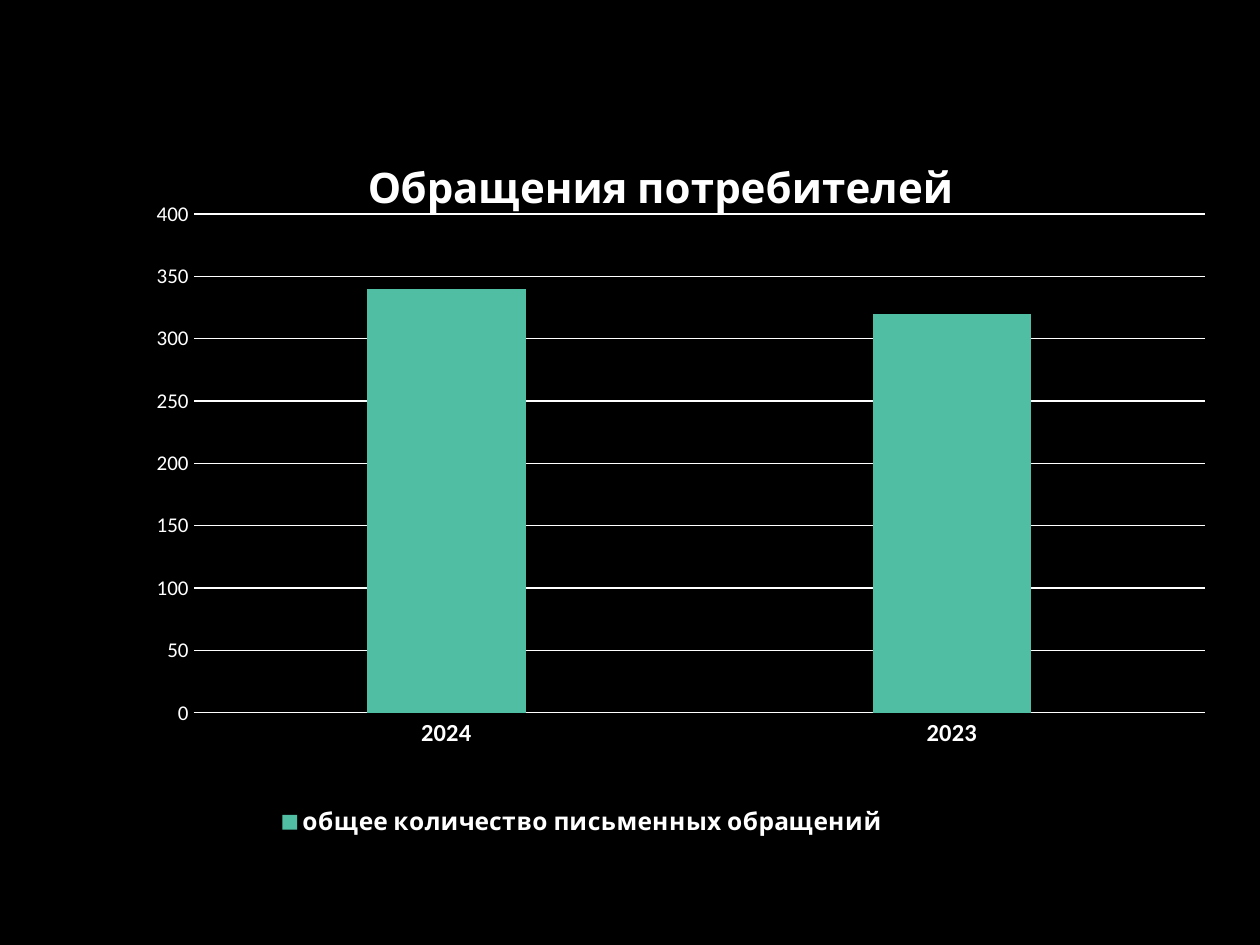
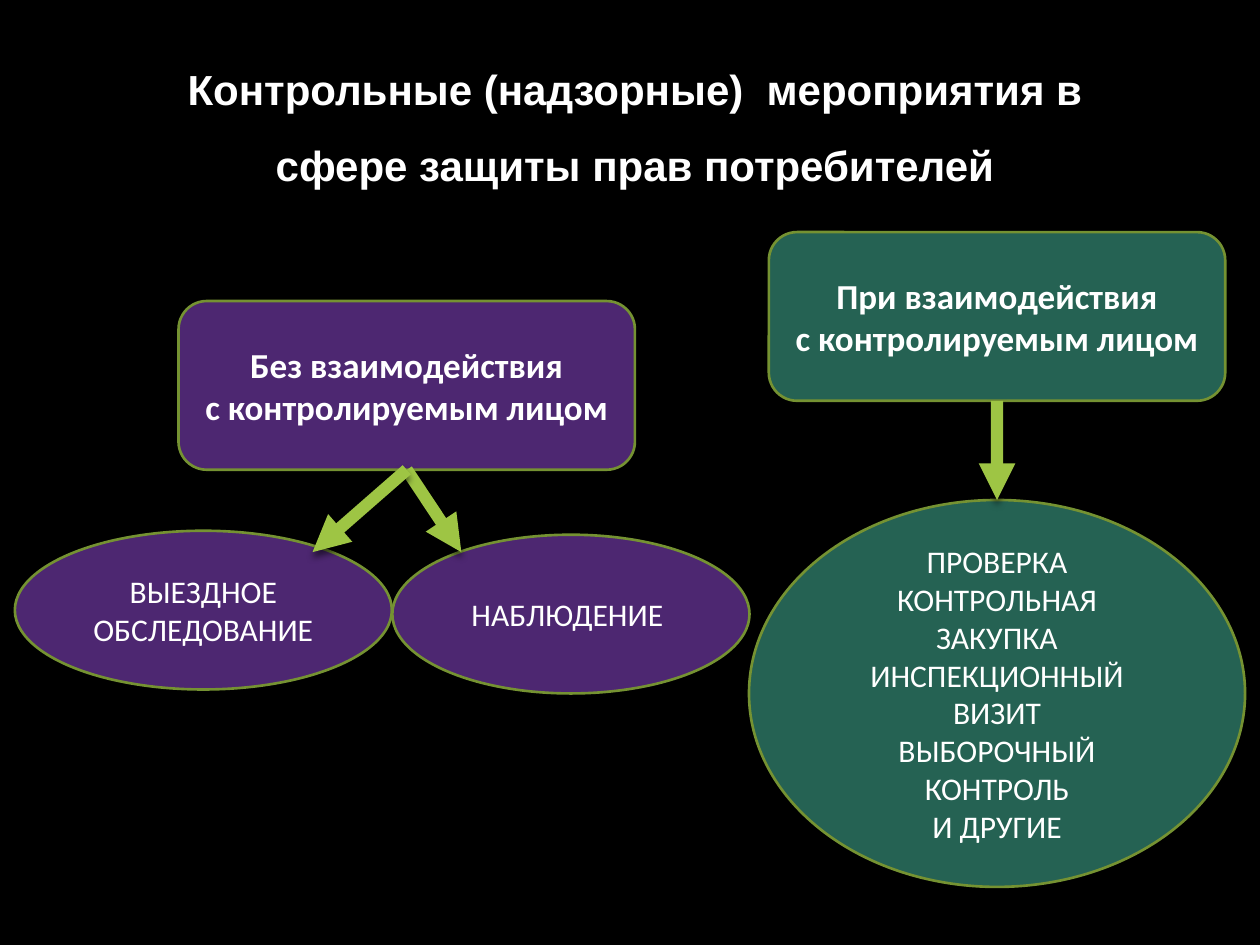
import pptx
import pptx.chart.data
import pptx.dml.color
import pptx.enum.chart
import pptx.enum.shapes
import pptx.enum.text
import pptx.oxml
import pptx.oxml.ns
import pptx.util

Cm = pptx.util.Cm
Pt = pptx.util.Pt
SHAPE = pptx.enum.shapes.MSO_SHAPE

COLORS = {
    "background": "000000",
    "text": "FFFFFF",
    "bar": "50BEA3",
    "remote": "4D2771",
    "contact": "256253",
    "outline": "759232",
    "arrow": "9EC544",
}
TITLE_FONT = {"name": "Arial", "size": Pt(24), "bold": True}
BOX_FONT = {"name": "Calibri", "size": Pt(20), "bold": True}
OVAL_FONT = {"name": "Calibri", "size": Pt(18), "bold": False}
CHART_FONTS = {
    "title": {"name": "Cabin", "size": Pt(24), "bold": True},
    "legend": {"name": "Cabin", "size": Pt(14), "bold": True},
    "category": {"name": "Calibri", "size": Pt(14), "bold": True},
    "value": {"name": "Calibri", "size": Pt(12), "bold": False},
}


def rgb(name):
    return pptx.dml.color.RGBColor.from_string(COLORS[name])


def style_font(font, values):
    for name, value in values.items():
        setattr(font, name, value)
    font.color.rgb = rgb("text")


def style_line(line, color, width):
    line.color.rgb = rgb(color)
    line.width = Pt(width)


def write(tf, lines, font):
    """Put each line in a centred paragraph of its own."""
    tf.word_wrap = True
    for i, line in enumerate(lines):
        p = tf.paragraphs[0] if i == 0 else tf.add_paragraph()
        p.alignment = pptx.enum.text.PP_ALIGN.CENTER
        r = p.add_run()
        r.text = line
        style_font(r.font, font)


def add_title(s, text, left, top, width, height):
    title = s.shapes.title
    title.left, title.top = Cm(left), Cm(top)
    title.width, title.height = Cm(width), Cm(height)
    tf = title.text_frame
    write(tf, [text], TITLE_FONT)
    tf.auto_size = pptx.enum.text.MSO_AUTO_SIZE.SHAPE_TO_FIT_TEXT
    tf.vertical_anchor = pptx.enum.text.MSO_ANCHOR.TOP
    tf.paragraphs[0].line_spacing = 1.5


def add_node(s, kind, color, lines, font, left, top, width, height):
    sp = s.shapes.add_shape(kind, Cm(left), Cm(top), Cm(width), Cm(height))
    sp.shadow.inherit = False
    sp.fill.solid()
    sp.fill.fore_color.rgb = rgb(color)
    style_line(sp.line, "outline", 1.5)
    sp.text_frame.vertical_anchor = pptx.enum.text.MSO_ANCHOR.MIDDLE
    write(sp.text_frame, lines, font)
    return sp


def add_box(s, color, lines, left, top):
    return add_node(s, SHAPE.ROUNDED_RECTANGLE, color, lines, BOX_FONT,
                    left, top, 9.2, 3.4)


def add_oval(s, color, lines, *place):
    return add_node(s, SHAPE.OVAL, color, lines, OVAL_FONT, *place)


def add_arrow(s, box, end_x, end_y):
    """Draw an arrow from the bottom of a box to a point."""
    arrow = s.shapes.add_connector(
        pptx.enum.shapes.MSO_CONNECTOR.STRAIGHT,
        box.left + box.width // 2, box.top + box.height, end_x, end_y)
    arrow.begin_connect(box, 2)
    style_line(arrow.line, "arrow", 7)
    ns = pptx.oxml.ns.nsdecls("a")
    arrow.get_or_add_ln().append(
        pptx.oxml.parse_xml(f'<a:tailEnd {ns} type="triangle"/>'))
    arrow._element.spPr.append(pptx.oxml.parse_xml(
        f'<a:effectLst {ns}><a:outerShdw blurRad="{Pt(4)}" dist="{Pt(3)}" '
        'dir="5400000" rotWithShape="0"><a:srgbClr val="000000">'
        '<a:alpha val="54000"/></a:srgbClr></a:outerShdw></a:effectLst>'))
    return arrow


def set_layout(chart, tag, **fractions):
    """Place a chart part by fractions (x, y, w, h) of the chart area."""
    part = chart.element.xpath(f".//c:{tag}")[0]
    for old in part.xpath("./c:layout"):
        part.remove(old)
    target = '<c:layoutTarget val="inner"/>' if tag == "plotArea" else ""
    modes = "".join(f'<c:{k}Mode val="edge"/>' for k in "xy")
    values = "".join(f'<c:{k} val="{v}"/>' for k, v in fractions.items())
    layout = pptx.oxml.parse_xml(
        f'<c:layout {pptx.oxml.ns.nsdecls("c")}><c:manualLayout>'
        f'{target}{modes}{values}</c:manualLayout></c:layout>')
    overlay = part.xpath("./c:overlay")
    if overlay:
        overlay[0].addprevious(layout)
    else:
        part.insert(0, layout)


def style_axes(chart):
    no_tick = pptx.enum.chart.XL_TICK_MARK.NONE
    category, value = chart.category_axis, chart.value_axis
    for axis, name in ((category, "category"), (value, "value")):
        axis.major_tick_mark = axis.minor_tick_mark = no_tick
        style_font(axis.tick_labels.font, CHART_FONTS[name])
    style_line(category.format.line, "text", 0.75)
    value.format.line.fill.background()
    value.minimum_scale, value.maximum_scale, value.major_unit = 0, 400, 50
    value.has_major_gridlines = True
    style_line(value.major_gridlines.format.line, "text", 0.75)


def add_column_chart(s, title, series_name, counts, left, top, width, height):
    data = pptx.chart.data.CategoryChartData()
    data.categories = list(counts)
    data.add_series(series_name, list(counts.values()))
    chart = s.shapes.add_chart(
        pptx.enum.chart.XL_CHART_TYPE.COLUMN_CLUSTERED,
        Cm(left), Cm(top), Cm(width), Cm(height), data).chart
    style_font(chart.font, {"name": "Calibri", "size": Pt(10)})

    chart.has_title = True
    p = chart.chart_title.text_frame.paragraphs[0]
    r = p.add_run()
    r.text = title
    style_font(r.font, CHART_FONTS["title"])

    chart.has_legend = True
    chart.legend.position = pptx.enum.chart.XL_LEGEND_POSITION.BOTTOM
    chart.legend.include_in_layout = False
    style_font(chart.legend.font, CHART_FONTS["legend"])

    style_axes(chart)
    plot = chart.plots[0]
    plot.gap_width = 219
    plot.vary_by_categories = False
    fill = plot.series[0].format.fill
    fill.solid()
    fill.fore_color.rgb = rgb("bar")

    set_layout(chart, "title", x=0.23, y=0.02)
    set_layout(chart, "plotArea", x=0.08, y=0.107, w=0.91, h=0.679)
    set_layout(chart, "legend", x=0.14, y=0.9, w=0.58, h=0.07)


def build_appeals(prs):
    s = prs.slides.add_slide(prs.slide_layouts[6])
    add_column_chart(s, "Обращения потребителей",
                     "общее количество письменных обращений",
                     {"2024": 340, "2023": 320}, 2.11, 2.73, 22.4, 14.81)


def build_control_measures(prs):
    s = prs.slides.add_slide(prs.slide_layouts[5])
    add_title(s, "Контрольные (надзорные)  мероприятия в сфере защиты прав "
              "потребителей", 2.3, 0.65, 21, 3.15)
    partner = "с контролируемым лицом"
    remote = add_box(s, "remote", ["Без взаимодействия", partner], 3.6, 6.07)
    contact = add_box(s, "contact", ["При взаимодействия", partner], 15.5, 4.68)
    add_oval(s, "remote", ["ВЫЕЗДНОЕ ОБСЛЕДОВАНИЕ"], 0.3, 10.7, 7.6, 3.2)
    add_oval(s, "remote", ["НАБЛЮДЕНИЕ "], 7.91, 10.78, 7.2, 3.2)
    checks = add_oval(
        s, "contact",
        ["ПРОВЕРКА", "КОНТРОЛЬНАЯ ЗАКУПКА", "ИНСПЕКЦИОННЫЙ ВИЗИТ",
         "ВЫБОРОЧНЫЙ КОНТРОЛЬ", "И ДРУГИЕ"], 15.1, 10.08, 10, 7.8)
    for end_x in (9.3, 6.3):
        add_arrow(s, remote, Cm(end_x), Cm(11.13))
    arrow = add_arrow(s, contact, checks.left + checks.width // 2, checks.top)
    arrow.end_connect(checks, 0)


def main():
    prs = pptx.Presentation()
    prs.slide_width, prs.slide_height = Cm(25.4), Cm(19.05)
    fill = prs.slide_master.background.fill
    fill.solid()
    fill.fore_color.rgb = rgb("background")
    build_appeals(prs)
    build_control_measures(prs)
    prs.save("out.pptx")


if __name__ == "__main__":
    main()
